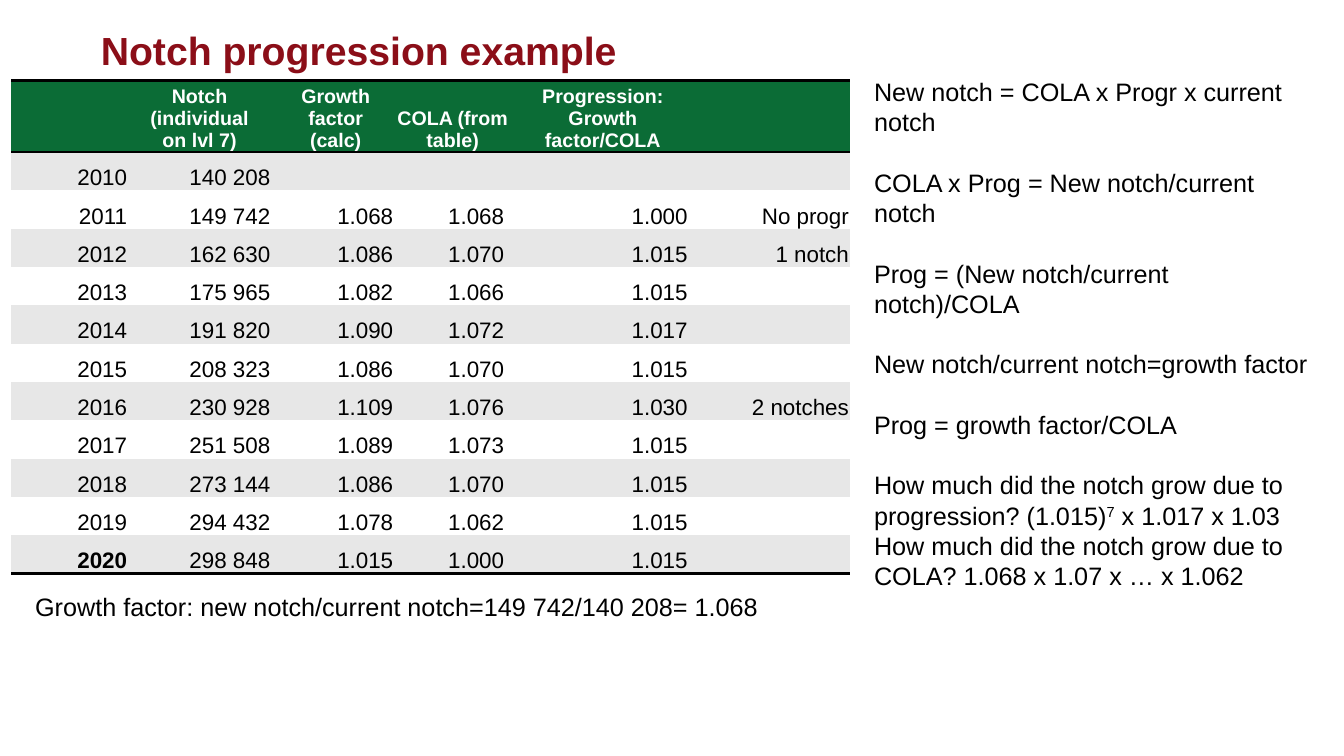
"""Build the notch progression slide: a yearly table with its formulas."""
from dataclasses import dataclass

from pptx import Presentation, util as u
from pptx.dml.color import RGBColor
from pptx.enum import text as t
from pptx.oxml import parse_xml
from pptx.oxml.ns import nsdecls, qn


@dataclass(frozen=True)
class Theme:
    font: str = "Arial"
    red: str = "8B0E18"
    green: str = "0B6C36"
    grey: str = "E7E7E7"
    white: str = "FFFFFF"
    black: str = "000000"
    title: int = 28
    note: int = 18
    cell: int = 16
    head: int = 14
    pitch: float = 21.6


theme = Theme()


def write(frame, lines, size, color=theme.black, bold=False, align=None,
          pitch=None, gaps=()):
    frame.word_wrap = True
    for i, line in enumerate(lines):
        para = frame.paragraphs[0] if i == 0 else frame.add_paragraph()
        para.alignment = align
        if pitch:
            para.line_spacing = u.Pt(pitch)
        if i in gaps:
            para.space_before = u.Pt(pitch)
        for k, part in enumerate(line.split("^")):
            run = para.add_run()
            run.text = part
            run.font.name = theme.font
            run.font.size = u.Pt(size)
            run.font.bold = bold
            run.font.color.rgb = RGBColor.from_string(color)
            if k % 2:
                run._r.get_or_add_rPr().set("baseline", "30000")


def rule(cell, side):
    cell._tc.get_or_add_tcPr().append(parse_xml(
        f'<a:{side} {nsdecls("a")} w="{u.Pt(2)}"><a:solidFill>'
        f'<a:srgbClr val="{theme.black}"/></a:solidFill></a:{side}>'))


deck = Presentation()
deck.slide_width, deck.slide_height = u.Inches(13.33), u.Inches(7.5)
slide = deck.slides.add_slide(deck.slide_layouts[5])

title = slide.shapes.title
title.left, title.top = u.Inches(0.9), u.Inches(0.27)
title.width, title.height = u.Inches(11.51), u.Inches(0.45)
title.text_frame.vertical_anchor = t.MSO_ANCHOR.MIDDLE
write(title.text_frame, ["Notch progression example"], theme.title,
      color=theme.red, bold=True, align=t.PP_ALIGN.LEFT)

heads = ["", "Notch\n(individual\non lvl 7)", "Growth factor\n(calc)",
         "COLA (from table)", "Progression: Growth factor/COLA", ""]
years = [
    ["2010", "140 208", "", "", "", ""],
    ["2011", "149 742", "1.068", "1.068", "1.000", "No progr"],
    ["2012", "162 630", "1.086", "1.070", "1.015", "1 notch"],
    ["2013", "175 965", "1.082", "1.066", "1.015", ""],
    ["2014", "191 820", "1.090", "1.072", "1.017", ""],
    ["2015", "208 323", "1.086", "1.070", "1.015", ""],
    ["2016", "230 928", "1.109", "1.076", "1.030", "2 notches"],
    ["2017", "251 508", "1.089", "1.073", "1.015", ""],
    ["2018", "273 144", "1.086", "1.070", "1.015", ""],
    ["2019", "294 432", "1.078", "1.062", "1.015", ""],
    ["2020", "298 848", "1.015", "1.000", "1.015", ""],
]
rows = [heads] + years
widths = [1.16, 1.48, 1.16, 1.16, 1.82, 1.54]
grid = slide.shapes.add_table(
    len(rows), len(widths), u.Inches(0.11), u.Inches(0.8),
    u.Inches(sum(widths)), u.Inches(4.88)).table
grid.horz_banding = False
grid._tbl.tblPr.find(qn("a:tableStyleId")).text = (
    "{2D5ABB26-0587-4C30-8999-92F81FD0307C}")
for col, width in zip(grid.columns, widths):
    col.width = u.Inches(width)

for r, row in enumerate(rows):
    top, last = r == 0, r == len(rows) - 1
    grid.rows[r].height = u.Inches(0.71 if top else 0.38)
    fill = theme.green if top else theme.grey if r % 2 else theme.white
    for c, value in enumerate(row):
        cell = grid.cell(r, c)
        padded = c == 1 or (c in (3, 4) and not top)
        cell.margin_left = cell.margin_top = u.Inches(0.01)
        cell.margin_right = u.Inches(0.07 if padded else 0.01)
        cell.margin_bottom = 0
        cell.vertical_anchor = t.MSO_ANCHOR.BOTTOM
        if top:
            rule(cell, "lnT")
        if top or last:
            rule(cell, "lnB")
        cell.fill.solid()
        cell.fill.fore_color.rgb = RGBColor.from_string(fill)
        if value:
            write(cell.text_frame, value.split("\n"),
                  theme.head if top else theme.cell,
                  color=theme.white if top else theme.black,
                  bold=top or (last and c == 0),
                  align=t.PP_ALIGN.CENTER if top else t.PP_ALIGN.RIGHT)

notes = [
    "New notch = COLA x Progr x current notch",
    "COLA x Prog = New notch/current notch",
    "Prog = (New notch/current notch)/COLA",
    "New notch/current notch=growth factor",
    "Prog = growth factor/COLA",
    "How much did the notch grow due to progression? (1.015)^7^ x 1.017 x 1.03",
    "How much did the notch grow due to COLA? 1.068 x 1.07 x … x 1.062",
]
side = slide.shapes.add_textbox(
    u.Inches(8.57), u.Inches(0.71), u.Inches(4.51), u.Inches(5.25))
write(side.text_frame, notes, theme.note, pitch=theme.pitch, gaps=range(1, 6))

foot = slide.shapes.add_textbox(
    u.Inches(0.25), u.Inches(5.82), u.Inches(13.08), u.Inches(0.4))
write(foot.text_frame,
      ["Growth factor: new notch/current notch=149 742/140 208= 1.068"],
      theme.note, pitch=theme.pitch)

deck.save("out.pptx")
